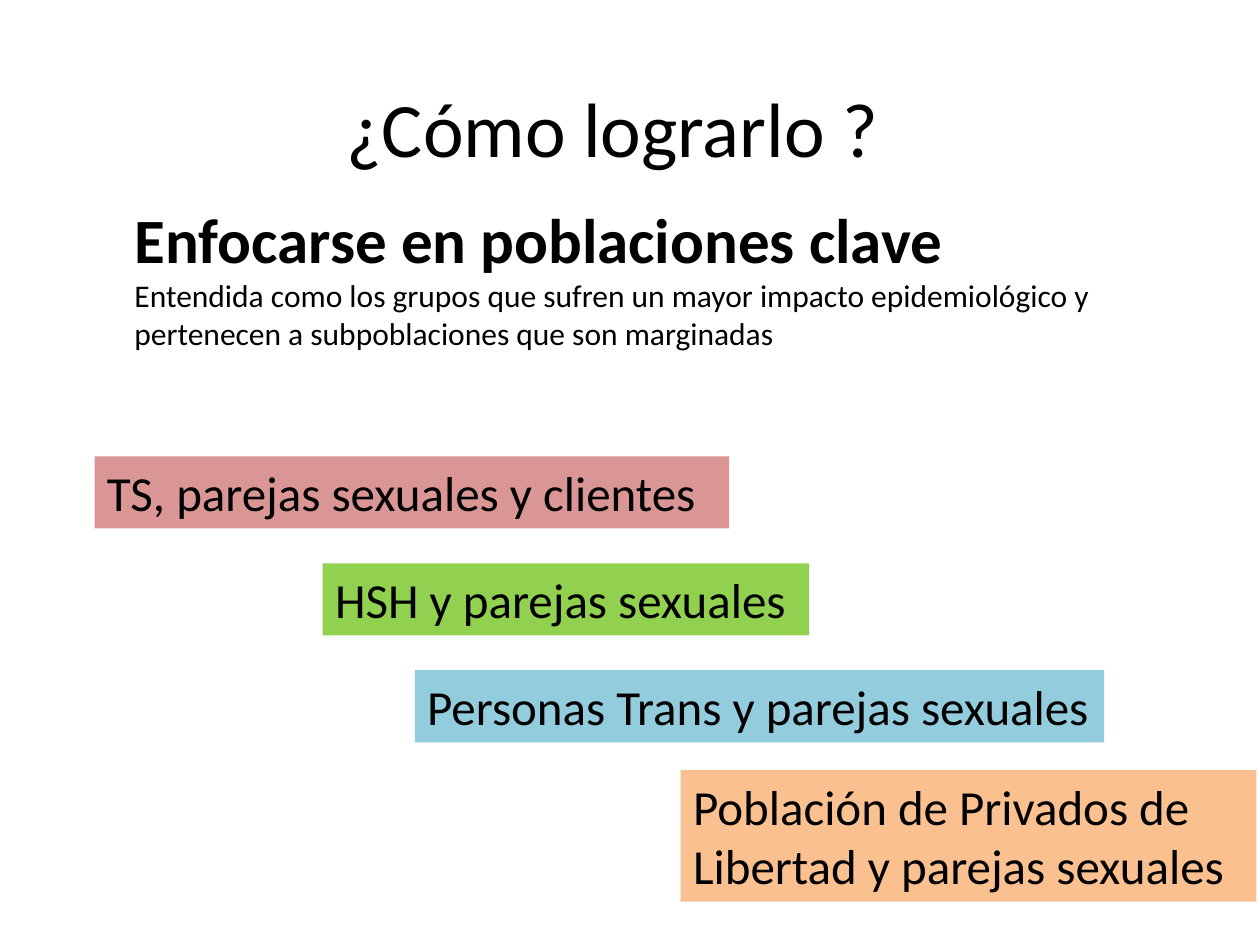
from pptx import Presentation
from pptx.dml.color import RGBColor
from pptx.enum import shapes, text
from pptx.util import Pt

BLACK = RGBColor(0x00, 0x00, 0x00)
ROSE = RGBColor(0xD9, 0x96, 0x94)
GREEN = RGBColor(0x92, 0xD0, 0x50)
BLUE = RGBColor(0x93, 0xCD, 0xDD)
PEACH = RGBColor(0xFA, 0xC0, 0x90)

LEFT, MID = text.PP_ALIGN.LEFT, text.PP_ALIGN.CENTER
TOP, CENTER = text.MSO_ANCHOR.TOP, text.MSO_ANCHOR.MIDDLE


def write(shape, lines, align=LEFT, anchor=TOP):
    """Fill a shape with (words, size, bold) lines, one paragraph each."""
    frame = shape.text_frame
    frame.word_wrap = True
    frame.vertical_anchor = anchor
    for i, (words, size, bold) in enumerate(lines):
        para = frame.add_paragraph() if i else frame.paragraphs[0]
        para.alignment = align
        run = para.add_run()
        run.text = words
        run.font.name = "Calibri"
        run.font.size = Pt(size)
        run.font.bold = bold
        run.font.color.rgb = BLACK


def add_text(slide, box, lines, **style):
    write(slide.shapes.add_textbox(*map(Pt, box)), lines, **style)


def add_group(slide, box, words, color):
    """Add a coloured bar that names one key population."""
    bar = slide.shapes.add_shape(shapes.MSO_SHAPE.RECTANGLE, *map(Pt, box))
    bar.shadow.inherit = False
    bar.fill.solid()
    bar.fill.fore_color.rgb = color
    bar.line.fill.background()
    write(bar, [(words, 28, False)])


def add_stairs(slide, left, top, bars):
    """Step the bars down to the right; each gives its offset and size."""
    for dx, dy, width, height, words, color in bars:
        add_group(slide, (left + dx, top + dy, width, height), words, color)


def main():
    deck = Presentation()
    deck.slide_width, deck.slide_height = Pt(720), Pt(540)
    slide = deck.slides.add_slide(deck.slide_layouts[6])

    add_text(slide, (26, 27.4, 648, 90), [("¿Cómo lograrlo ?", 44, False)],
             align=MID, anchor=CENTER)
    add_text(slide, (69.8, 110.9, 561.6, 116.6), [
        ("Enfocarse en poblaciones clave", 36, True),
        ("Entendida como los grupos que sufren un mayor impacto "
         "epidemiológico y pertenecen a subpoblaciones que son marginadas",
         18, False),
    ])
    add_stairs(slide, 54, 260.8, [
        (0, 0, 362.7, 41.2, "TS, parejas sexuales y clientes", ROSE),
        (130.4, 61.1, 278, 41.2, "HSH y parejas sexuales", GREEN),
        (183, 122.2, 394, 41.2, "Personas Trans y parejas sexuales", BLUE),
        (335, 179.3, 329, 75.1,
         "Población de Privados de Libertad y parejas sexuales", PEACH),
    ])
    deck.save("out.pptx")


if __name__ == "__main__":
    main()
